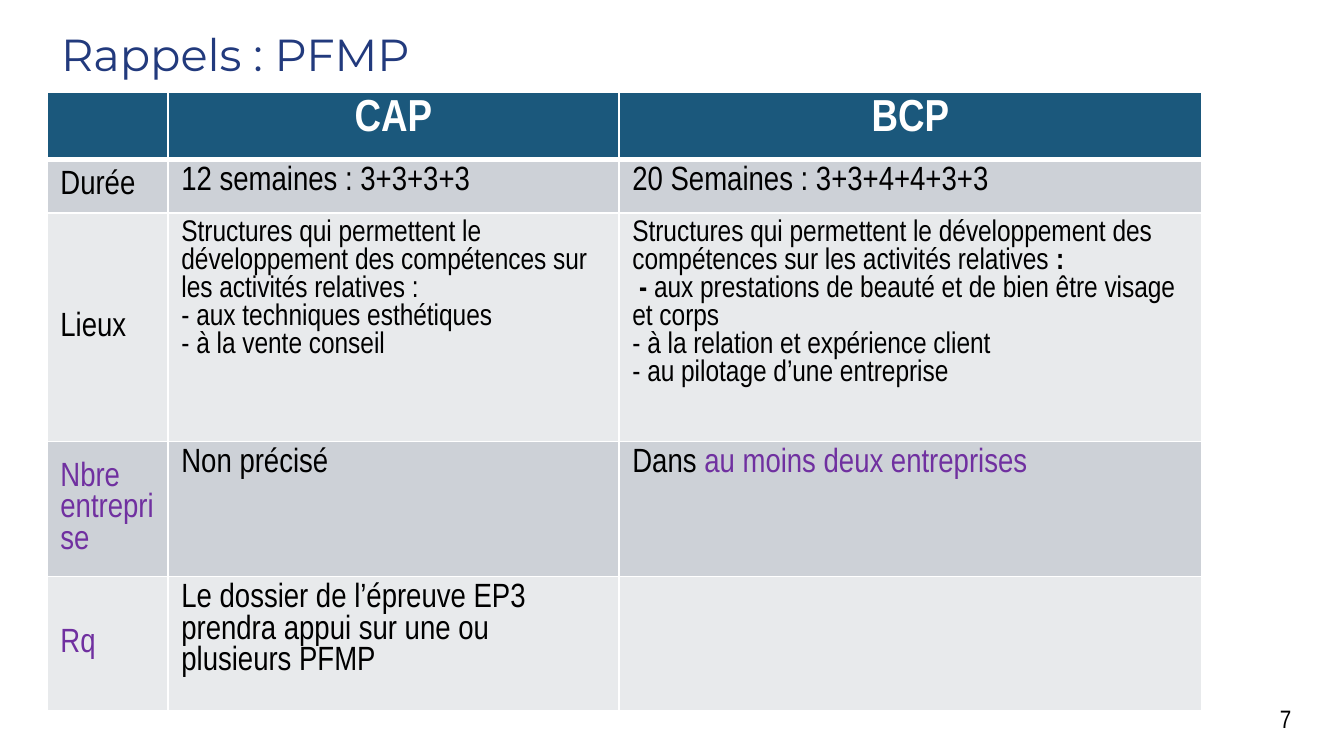
"""Builds the slide comparing the PFMP work placements in CAP and BCP."""
from dataclasses import dataclass

from lxml.etree import SubElement
from pptx import Presentation
from pptx.dml.color import RGBColor
from pptx.enum.text import MSO_ANCHOR as ANCHOR, PP_ALIGN as ALIGN
from pptx.oxml.ns import qn
from pptx.util import Pt


@dataclass(frozen=True)
class Theme:
    title_font: str = "Montserrat"
    body_font: str = "Arial Narrow"
    navy: str = "223A7D"
    header: str = "1B587C"
    bands: tuple = ("CDD1D7", "E8EAEC")
    white: str = "FFFFFF"
    black: str = "000000"
    purple: str = "7030A0"
    big: float = 24
    body: float = 18
    small: float = 16
    number: float = 13.5


T = Theme()
SCALE = 914400 / 134.4
SLIDE = (1344, 756)

TITLE = "Rappels : PFMP"
TITLE_BOX = (48, 20, 1238, 67)
PAGE = "7"
PAGE_BOX = (1258, 700, 55, 40)

TABLE_AT = (47, 92)
COLS = (121, 451, 583)
ROWS = (66, 54, 228, 135, 134)

PURPLE = {"color": T.purple}
BOLD = {"bold": True}
HEADERS = ["", "CAP", "BCP"]
BODY = [
    (["Durée"], ["12 semaines : 3+3+3+3"], ["20 Semaines : 3+3+4+4+3+3"]),
    (
        ["Lieux"],
        [
            "Structures qui permettent le développement des compétences sur les activités relatives :",
            "- aux techniques esthétiques",
            "- à la vente conseil",
        ],
        [
            [
                ("Structures qui permettent le développement des compétences sur les activités relatives ", {}),
                (":", BOLD),
            ],
            [(" - ", BOLD), ("aux prestations de beauté et de bien être visage et corps", {})],
            "- à la relation et expérience client",
            "- au pilotage d’une entreprise",
        ],
    ),
    (
        [[("Nbre entreprise", PURPLE)]],
        ["Non précisé"],
        [[("Dans ", {}), ("au moins deux entreprises", PURPLE)]],
    ),
    (
        [[("Rq", PURPLE)]],
        ["Le dossier de l’épreuve EP3 prendra appui sur une ou plusieurs PFMP"],
        [],
    ),
]


def px(n):
    return round(n * SCALE)


def rgb(value):
    return RGBColor.from_string(value)


def write(tf, paragraphs, *, size=T.body, color=T.black, font=T.body_font, bold=False, align=ALIGN.LEFT):
    for i, runs in enumerate(paragraphs):
        p = tf.add_paragraph() if i else tf.paragraphs[0]
        p.alignment = align
        for text, fmt in [(runs, {})] if isinstance(runs, str) else runs:
            r = p.add_run()
            r.text = text
            r.font.name = font
            r.font.size = Pt(size)
            r.font.bold = fmt.get("bold", bold)
            r.font.color.rgb = rgb(fmt.get("color", color))


def add_text(slide, box, text, *, anchor=ANCHOR.TOP, **fmt):
    tf = slide.shapes.add_textbox(*map(px, box)).text_frame
    tf.word_wrap = True
    tf.vertical_anchor = anchor
    write(tf, [text], **fmt)


def style_cell(cell, fill, bottom=1, top=1):
    tc_pr = cell._tc.get_or_add_tcPr()
    for side, width in (("L", 1), ("R", 1), ("T", top), ("B", bottom)):
        ln = SubElement(tc_pr, qn(f"a:ln{side}"), w=str(Pt(width)))
        SubElement(SubElement(ln, qn("a:solidFill")), qn("a:srgbClr"), val=T.white)
    cell.fill.solid()
    cell.fill.fore_color.rgb = rgb(fill)


def add_grid(slide):
    size = (sum(COLS), sum(ROWS))
    table = slide.shapes.add_table(len(ROWS), len(COLS), *map(px, TABLE_AT + size)).table
    for column, width in zip(table.columns, COLS):
        column.width = px(width)
    for row, height in zip(table.rows, ROWS):
        row.height = px(height)

    for j, text in enumerate(HEADERS):
        cell = table.cell(0, j)
        style_cell(cell, T.header, bottom=3)
        if text:
            write(cell.text_frame, [text], size=T.big, color=T.white, bold=True, align=ALIGN.CENTER)

    for i, row in enumerate(BODY):
        for j, paragraphs in enumerate(row):
            cell = table.cell(i + 1, j)
            style_cell(cell, T.bands[i % 2], top=1 if i else 3)
            cell.vertical_anchor = ANCHOR.TOP if j else ANCHOR.MIDDLE
            write(cell.text_frame, paragraphs, size=T.small if len(paragraphs) > 1 else T.body)


def main():
    prs = Presentation()
    prs.slide_width, prs.slide_height = map(px, SLIDE)
    slide = prs.slides.add_slide(prs.slide_layouts[6])
    add_text(slide, TITLE_BOX, TITLE, size=T.big, color=T.navy, font=T.title_font, align=ALIGN.JUSTIFY)
    add_text(slide, PAGE_BOX, PAGE, anchor=ANCHOR.BOTTOM, size=T.number, align=ALIGN.CENTER)
    add_grid(slide)
    prs.save("out.pptx")


if __name__ == "__main__":
    main()
